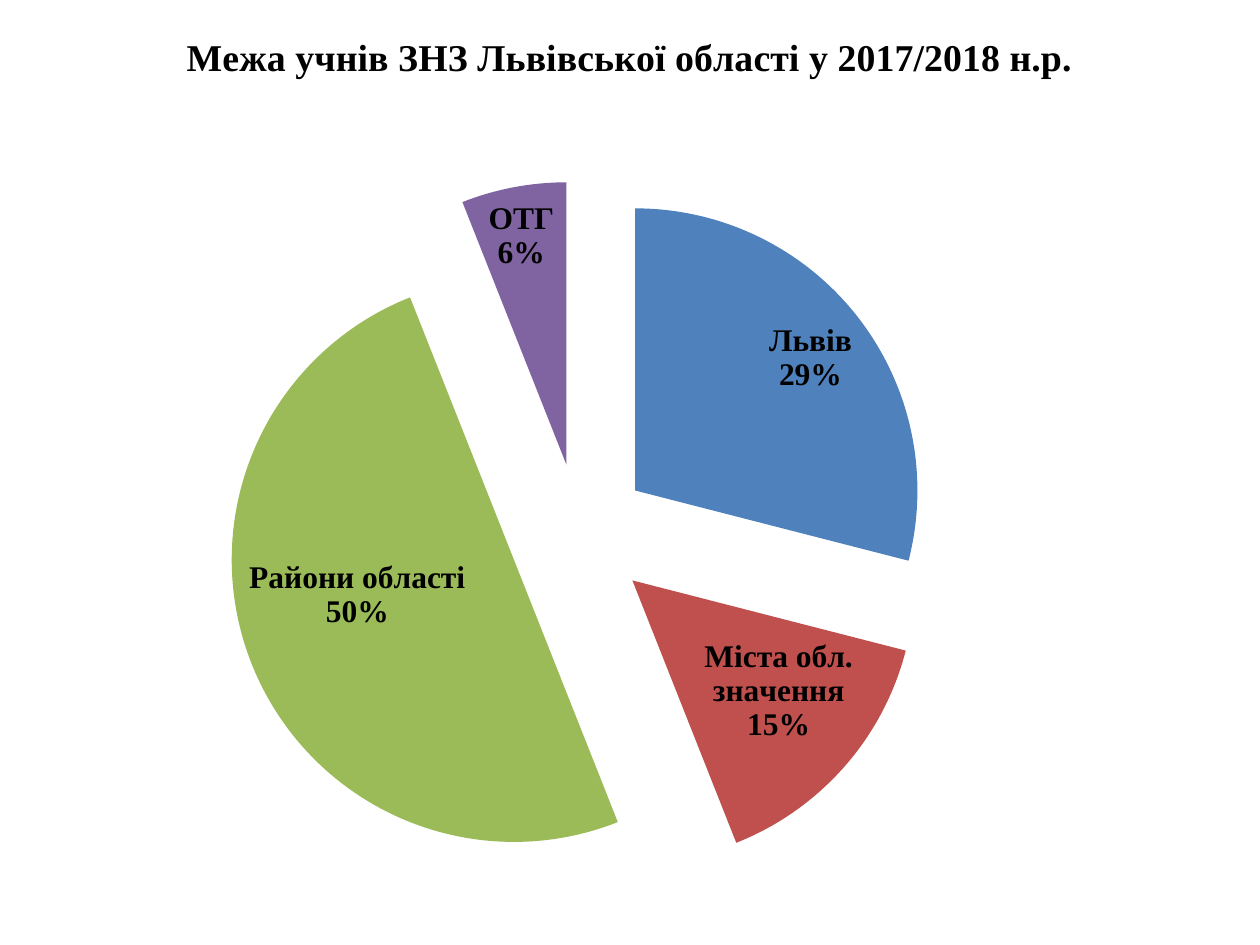
from lxml import etree
from pptx import Presentation
from pptx.chart import data
from pptx.dml.color import RGBColor
from pptx.enum import chart as ch
from pptx.oxml import ns
from pptx.util import Cm, Pt

BLACK = RGBColor(0x00, 0x00, 0x00)
BLUE = RGBColor(0x4F, 0x81, 0xBD)
RED = RGBColor(0xC0, 0x50, 0x4D)
GREEN = RGBColor(0x9B, 0xBB, 0x59)
PURPLE = RGBColor(0x80, 0x64, 0xA2)

# Area, share of pupils in percent, slice colour
AREAS = [
    ("Львів", 29, BLUE),
    ("Міста обл. значення", 15, RED),
    ("Райони області", 50, GREEN),
    ("ОТГ", 6, PURPLE),
]
EXPLOSION = 25
PLOT_LAYOUT = {"xMode": "edge", "yMode": "edge",
               "x": 0.18, "y": 0.19, "w": 0.56, "h": 0.75}
LABEL_FORMAT = {
    "show_category_name": True,
    "show_percentage": True,
    "show_value": False,
    "number_format": "0%",
    "number_format_is_linked": False,
    "position": ch.XL_LABEL_POSITION.BEST_FIT,
}


def set_font(font, size):
    for name, value in {"name": "Times New Roman", "size": Pt(size), "bold": True}.items():
        setattr(font, name, value)
    font.color.rgb = BLACK


# Slide
prs = Presentation()
prs.slide_width, prs.slide_height = Cm(25.4), Cm(19.05)
slide = prs.slides.add_slide(prs.slide_layouts[6])

# Pie chart over the whole slide
shares = data.CategoryChartData()
shares.categories = [area for area, share, colour in AREAS]
shares.add_series("Series 1", [share for area, share, colour in AREAS])
pupils = slide.shapes.add_chart(
    ch.XL_CHART_TYPE.PIE, Cm(0), Cm(0), prs.slide_width, prs.slide_height, shares).chart
pupils.has_legend = False
set_font(pupils.font, 18)

# Heading of the chart
heading = pupils.chart_title.text_frame
heading.text = "Межа учнів ЗНЗ Львівської області у 2017/2018 н.р."
set_font(heading.paragraphs[0].runs[0].font, 21.6)
pupils.chart_title.include_in_layout = False

# Slices
pie = pupils.plots[0]
pie.vary_by_categories = True
slices = pie.series[0]
for index, (area, share, colour) in enumerate(AREAS):
    fill = slices.points[index].format.fill
    fill.solid()
    fill.fore_color.rgb = colour

# Gap between the slices
explosion = etree.Element(ns.qn("c:explosion"), val=str(EXPLOSION))
slices._element.find(ns.qn("c:dPt")).addprevious(explosion)
for point in slices._element.findall(ns.qn("c:dPt")):
    point.find(ns.qn("c:spPr")).addprevious(
        etree.Element(ns.qn("c:explosion"), val=str(EXPLOSION)))

# Labels
labels = slices.data_labels
for name, value in LABEL_FORMAT.items():
    setattr(labels, name, value)
set_font(labels.font, 18)
separator = etree.Element(ns.qn("c:separator"))
separator.text = "\n"
labels._element.find(ns.qn("c:showBubbleSize")).addnext(separator)

# Place of the pie
plot_area = pupils._chartSpace.chart.plotArea
layout = plot_area.find(ns.qn("c:layout"))
if layout is None:
    layout = etree.Element(ns.qn("c:layout"))
    plot_area.insert(0, layout)
manual = etree.SubElement(layout, ns.qn("c:manualLayout"))
etree.SubElement(manual, ns.qn("c:layoutTarget"), val="inner")
for name, value in PLOT_LAYOUT.items():
    etree.SubElement(manual, ns.qn("c:" + name), val=str(value))

prs.save("out.pptx")
